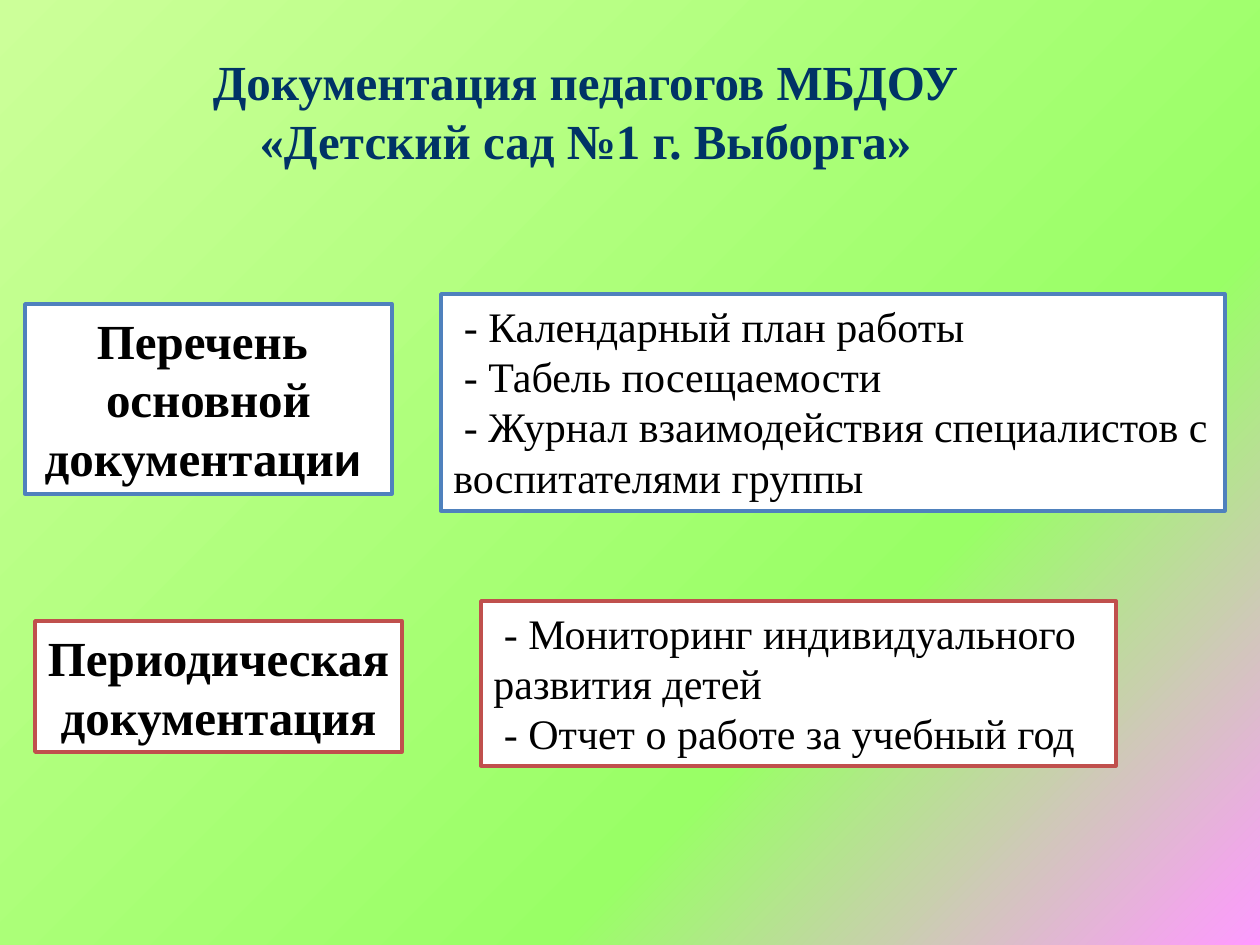
from dataclasses import dataclass

from pptx import Presentation
from pptx import util as u
from pptx.dml.color import RGBColor
from pptx.enum import shapes, text
from pptx.oxml import ns, parse_xml

PX = 914400 / 126


@dataclass(frozen=True)
class Theme:
    font: str = "Times New Roman"
    alt_font: str = "Calibri"
    heading: int = 28
    body: int = 24
    line: int = 2
    title: str = "003366"
    ink: str = "000000"
    paper: str = "FFFFFF"
    main: str = "4F81BD"
    periodic: str = "C0504D"
    # position %, colour, opacity %
    backdrop: tuple = ((0, "FF99FF", 57), (32, "99FF66", 29), (100, "CCFF99", 63))


T = Theme()
HEADING = dict(size=u.Pt(T.heading), bold=True, name=T.font)
BODY = dict(size=u.Pt(T.body), bold=False, name=T.font)


def px(*values):
    return [u.Emu(round(v * PX)) for v in values]


def paint_background(s):
    """Radial gradient spreading from the bottom right corner."""
    stops = "".join(
        f'<a:gs pos="{pos * 1000}"><a:srgbClr val="{color}">'
        f'<a:alpha val="{alpha * 1000}"/></a:srgbClr></a:gs>'
        for pos, color, alpha in T.backdrop)
    bg = parse_xml(
        f'<p:bg {ns.nsdecls("p", "a")}><p:bgPr><a:gradFill rotWithShape="1">'
        f'<a:gsLst>{stops}</a:gsLst><a:path path="circle">'
        '<a:fillToRect l="100000" t="100000"/></a:path>'
        '<a:tileRect r="-100000" b="-100000"/></a:gradFill>'
        '<a:effectLst/></p:bgPr></p:bg>')
    s.element.cSld.insert(0, bg)


def write(sp, paragraphs, fmt, color, align):
    """Each paragraph is a list of (text, overriding format) runs."""
    tf = sp.text_frame
    frame = dict(word_wrap=True, vertical_anchor=text.MSO_ANCHOR.TOP,
                 auto_size=text.MSO_AUTO_SIZE.SHAPE_TO_FIT_TEXT)
    for key, value in frame.items():
        setattr(tf, key, value)
    for i, runs in enumerate(paragraphs):
        p = tf.paragraphs[0] if i == 0 else tf.add_paragraph()
        p.alignment = align
        for words, extra in runs:
            r = p.add_run()
            r.text = words
            for key, value in {**fmt, **extra}.items():
                setattr(r.font, key, value)
            r.font.color.rgb = RGBColor.from_string(color)


def add_title(s, box, words):
    sp = s.shapes.title
    sp.left, sp.top, sp.width, sp.height = px(*box)
    write(sp, [[(words, {})]], HEADING, T.title, text.PP_ALIGN.CENTER)


def add_panel(s, box, paragraphs, border, fmt, align):
    sp = s.shapes.add_shape(shapes.MSO_SHAPE.RECTANGLE, *px(*box))
    sp.shadow.inherit = False
    sp.fill.solid()
    sp.fill.fore_color.rgb = RGBColor.from_string(T.paper)
    sp.line.color.rgb = RGBColor.from_string(border)
    sp.line.width = u.Pt(T.line)
    write(sp, paragraphs, fmt, T.ink, align)


def add_section(s, box, label_box, list_box, label, items, border):
    """Heading panel beside a list panel, both relative to the section box."""
    left, top = box

    def place(x, y, w, h):
        return left + x, top + y, w, h

    add_panel(s, place(*label_box), label, border, HEADING, text.PP_ALIGN.CENTER)
    lines = [[(f" - {item}", {})] for item in items]
    add_panel(s, place(*list_box), lines, border, BODY, text.PP_ALIGN.LEFT)


def main():
    prs = Presentation()
    prs.slide_width, prs.slide_height = px(1260, 945)
    s = prs.slides.add_slide(prs.slide_layouts[5])
    paint_background(s)
    add_title(s, (134, 45, 903, 131),
              "Документация педагогов МБДОУ «Детский сад №1 г. Выборга»")
    add_section(
        s, (25, 294), (0, 10, 367, 190), (416, 0, 784, 217),
        [[("Перечень ", {})],
         [("основной документаци", {}), ("и ", dict(name=T.alt_font))]],
        ["Календарный план работы",
         "Табель посещаемости",
         "Журнал взаимодействия специалистов с воспитателями группы"],
        T.main)
    add_section(
        s, (35, 601), (0, 20, 367, 131), (446, 0, 635, 165),
        [[("Периодическая документация", {})]],
        ["Мониторинг индивидуального развития детей",
         "Отчет о работе за учебный год"],
        T.periodic)
    prs.save("out.pptx")


if __name__ == "__main__":
    main()
